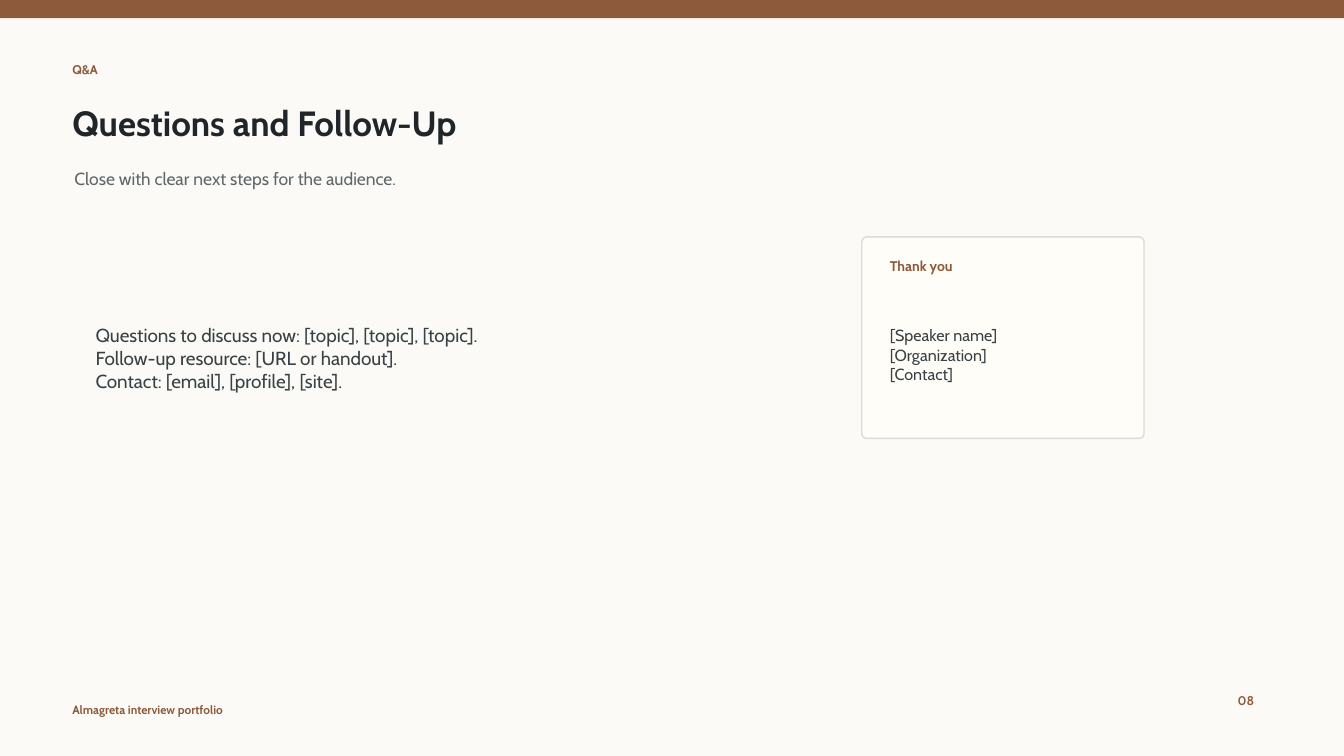
from pptx import Presentation
from pptx.dml.color import RGBColor
from pptx.enum.shapes import MSO_SHAPE as Shape
from pptx.enum.text import MSO_ANCHOR as Anchor
from pptx.util import Pt

COLORS = {
    "paper": "FBFAF6",
    "card": "FFFDF8",
    "border": "D8DDD7",
    "accent": "8D5A3B",
    "title": "1F2528",
    "muted": "5E686B",
    "body": "384144",
}
WIDTH, HEIGHT = 960, 540
MARGIN = 44.64


class SlideBuilder:
    """Holds the style and the current slide; lengths are in points."""

    font_name = "Cabin"

    def __init__(self, slide):
        self.slide = slide
        self.paint(slide.background.fill, "paper")

    def paint(self, fill, color):
        fill.solid()
        fill.fore_color.rgb = RGBColor.from_string(COLORS[color])

    def panel(self, left, top, width, height, fill, border=None, radius=None):
        kind = Shape.RECTANGLE if radius is None else Shape.ROUNDED_RECTANGLE
        shape = self.slide.shapes.add_shape(
            kind, Pt(left), Pt(top), Pt(width), Pt(height))
        shape.shadow.inherit = False
        self.paint(shape.fill, fill)
        if radius is not None:
            shape.adjustments[0] = radius
        if border:
            self.paint(shape.line.fill, border)
            shape.line.width = Pt(1)
        else:
            shape.line.fill.background()

    def text(self, left, top, width, height, lines, size, color, bold=False):
        box = self.slide.shapes.add_textbox(
            Pt(left), Pt(top), Pt(width), Pt(height))
        frame = box.text_frame
        frame.word_wrap = True
        frame.vertical_anchor = Anchor.MIDDLE
        frame.text = "\n".join(lines)
        for paragraph in frame.paragraphs:
            font = paragraph.font
            font.name, font.size, font.bold = self.font_name, Pt(size), bold
            font.color.rgb = RGBColor.from_string(COLORS[color])


def main():
    presentation = Presentation()
    presentation.slide_width, presentation.slide_height = Pt(WIDTH), Pt(HEIGHT)
    builder = SlideBuilder(
        presentation.slides.add_slide(presentation.slide_layouts[6]))

    # Top band and footer
    builder.panel(0, 0, WIDTH, 12.96, "accent")
    builder.text(MARGIN, 499.68, 216, 14.4, ["Almagreta interview portfolio"],
                 8.5, "accent", bold=True)
    builder.text(876.96, 491.04, 36, 18, ["08"], 9, "accent", bold=True)

    # Heading
    builder.text(MARGIN, 41.76, 345.6, 15.84, ["Q&A"], 9, "accent", bold=True)
    builder.text(MARGIN, 67.68, 705.6, 39.6, ["Questions and Follow-Up"],
                 25, "title", bold=True)
    builder.text(46.08, 112.32, 777.6, 30.24,
                 ["Close with clear next steps for the audience."],
                 12.5, "muted")

    # Next steps
    builder.text(61.2, 162, 529.2, 187.2, [
        "Questions to discuss now: [topic], [topic], [topic].",
        "Follow-up resource: [URL or handout].",
        "Contact: [email], [profile], [site].",
    ], 13.5, "body")

    # Thank-you card
    card_left, card_top, card_width, padding = 615.6, 169.2, 201.6, 12.96
    inner_left, inner_width = card_left + padding, card_width - 2 * padding
    builder.panel(card_left, card_top, card_width, 144, "card", "border", 0.025)
    builder.text(inner_left, card_top + 11.52, inner_width, 18,
                 ["Thank you"], 10, "accent", bold=True)
    builder.text(inner_left, card_top + 34.56, inner_width, 99.36,
                 ["[Speaker name]", "[Organization]", "[Contact]"],
                 11.5, "body")

    presentation.save("out.pptx")


if __name__ == "__main__":
    main()
